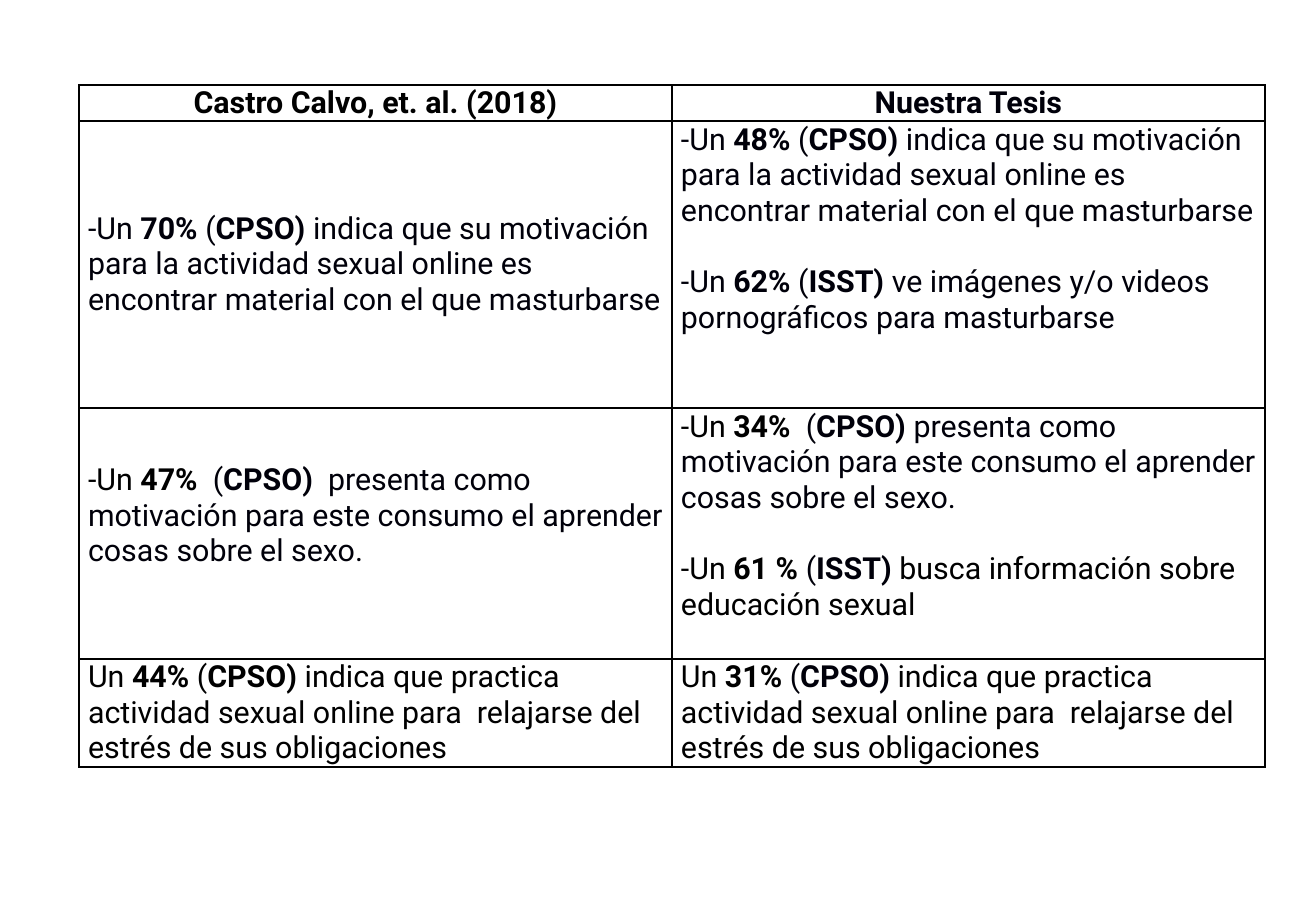
"""Build a slide with a table comparing the findings of two studies."""
from lxml.etree import SubElement
from pptx import Presentation
from pptx.dml.color import RGBColor
from pptx.enum.text import MSO_ANCHOR, PP_ALIGN
from pptx.oxml.ns import qn
from pptx.util import Pt

MATERIAL = "indica que su motivación para la actividad sexual online es encontrar material con el que masturbarse"
LEARNING = "presenta como motivación para este consumo el aprender cosas sobre el sexo."
RELAXING = "indica que practica actividad sexual online para  relajarse del estrés de sus obligaciones"

HEADERS = [
    {"paragraphs": [[("black", "*Castro Calvo, et. al. (2018)*")]]},
    {"paragraphs": [[("ink", "*Nuestra Tesis*")]]},
]
FINDINGS = [
    [
        {"paragraphs": [[("ink", f"-Un *70% *(*CPSO) *{MATERIAL}")]]},
        {"paragraphs": [
            [("ink", f"-Un *48% *(*CPSO) *{MATERIAL}")],
            [("ink", "-Un *62% *(*ISST)* ve imágenes y/o videos pornográficos para masturbarse")],
        ], "lines_below": 2},
    ],
    [
        {"paragraphs": [
            [("black", "-Un *47%  *"), ("ink", f"(*CPSO) * {LEARNING}")],
        ], "lines_below": 1},
        {"paragraphs": [
            [("black", "-Un *34%  *"), ("ink", f"(*CPSO) *{LEARNING}")],
            [("black", "-Un *61 % *"), ("ink", "(*ISST) *"),
             ("black", "busca información sobre educación sexual")],
        ], "lines_below": 1},
    ],
    [
        {"paragraphs": [[("black", f"Un *44% *(*CPSO) *{RELAXING}")]]},
        {"paragraphs": [
            [("black", "Un *31% *"), ("ink", "(*CPSO) *"), ("black", RELAXING)],
        ]},
    ],
]

THEME = {
    "font": "Roboto",
    "size": Pt(18),
    "line_height": Pt(21),
    "border": Pt(1),
    "black": RGBColor(0, 0, 0),
    "ink": RGBColor(0, 0, 10),
    "white": RGBColor(255, 255, 255),
}
EMU_PER_PX = 7526
SLIDE_WIDTH, SLIDE_HEIGHT = 1316, 911
TABLE_LEFT, TABLE_TOP = 79, 85
COLUMN_WIDTH = 593
ROW_HEIGHTS = [36, 287, 251, 108]
SIDE_MARGIN = 9


def px(length):
    return length * EMU_PER_PX


def set_all(target, values):
    for name, value in values.items():
        setattr(target, name, value)


def add_spans(para, parts):
    for color, marked in parts:
        for index, text in enumerate(marked.split("*")):
            if text:
                span = para.add_run()
                span.text = text
                set_all(span.font, {"name": THEME["font"], "size": THEME["size"], "bold": index % 2 == 1})
                span.font.color.rgb = THEME[color]


def add_borders(cell):
    properties = cell._tc.get_or_add_tcPr()
    for index, side in enumerate(("lnL", "lnR", "lnT", "lnB")):
        line = SubElement(properties, qn(f"a:{side}"), w=str(THEME["border"]))
        fill = SubElement(line, qn("a:solidFill"))
        SubElement(fill, qn("a:srgbClr"), val=str(THEME["black"]))
        properties.insert(index, line)


def fill_cell(cell, content, alignment):
    set_all(cell, {
        "vertical_anchor": MSO_ANCHOR.MIDDLE,
        "margin_left": px(SIDE_MARGIN),
        "margin_right": px(SIDE_MARGIN),
        "margin_top": 0,
        "margin_bottom": content.get("lines_below", 0) * THEME["line_height"],
    })
    cell.fill.solid()
    cell.fill.fore_color.rgb = THEME["white"]
    add_borders(cell)
    frame = cell.text_frame
    for index, parts in enumerate(content["paragraphs"]):
        para = frame.add_paragraph() if index else frame.paragraphs[0]
        set_all(para, {
            "alignment": alignment,
            "space_before": THEME["line_height"] if index else Pt(0),
        })
        add_spans(para, parts)


def main():
    deck = Presentation()
    set_all(deck, {"slide_width": px(SLIDE_WIDTH), "slide_height": px(SLIDE_HEIGHT)})
    page = deck.slides.add_slide(deck.slide_layouts[6])
    rows = [HEADERS, *FINDINGS]
    table = page.shapes.add_table(
        len(rows), len(HEADERS), px(TABLE_LEFT), px(TABLE_TOP),
        px(COLUMN_WIDTH * len(HEADERS)), px(sum(ROW_HEIGHTS)),
    ).table
    set_all(table, {"first_row": False, "horz_banding": False})
    for column in table.columns:
        column.width = px(COLUMN_WIDTH)
    for row_index, contents in enumerate(rows):
        table.rows[row_index].height = px(ROW_HEIGHTS[row_index])
        alignment = PP_ALIGN.LEFT if row_index else PP_ALIGN.CENTER
        for column_index, content in enumerate(contents):
            fill_cell(table.cell(row_index, column_index), content, alignment)
    deck.save("out.pptx")


if __name__ == "__main__":
    main()
